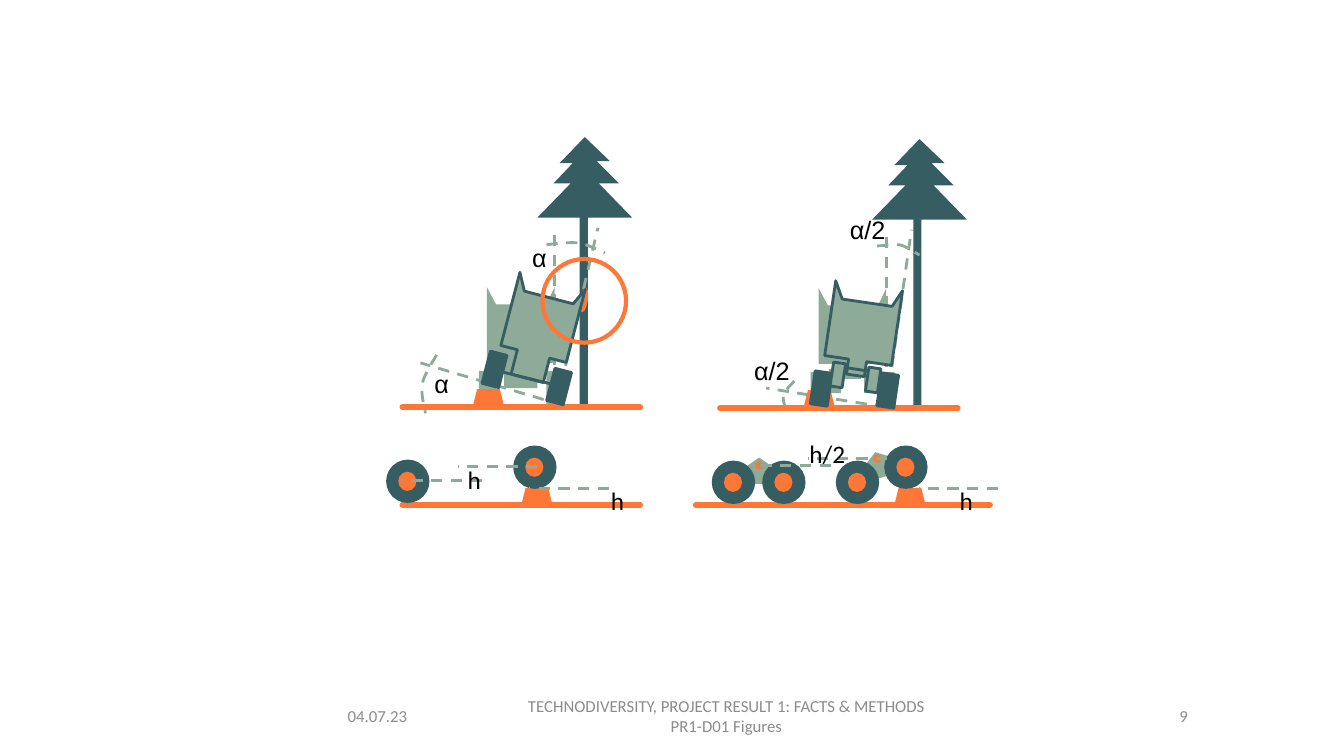
from pptx import Presentation
from pptx.dml.color import RGBColor
from pptx.enum.dml import MSO_LINE
from pptx.enum.shapes import MSO_CONNECTOR, MSO_SHAPE as SHAPE
from pptx.enum.text import MSO_ANCHOR as ANCHOR, PP_ALIGN as ALIGN
from pptx.oxml.ns import qn
from pptx.util import Inches, Pt
from lxml import etree

COLORS = {"dark": "355D62", "sage": "8EAB99", "orange": "FF7737",
          "gray": "8C8C8C", "black": "000000"}

TREE = [(0.33, 0.8), (0.94, 0.8), (0.61, 0.46), (0.81, 0.46), (0.59, 0.24),
        (0.72, 0.24), (0.47, 0), (0.22, 0.26), (0.35, 0.26), (0.16, 0.46),
        (0.33, 0.46), (0, 0.8)]


class Drawing:
    def __init__(self, slide):
        self.shapes = slide.shapes

    def color(self, name):
        return RGBColor.from_string(COLORS[name])

    def style(self, s, fill=None, line=None, width=2.0, dash=False):
        s.shadow.inherit = False
        if fill:
            s.fill.solid()
            s.fill.fore_color.rgb = self.color(fill)
        else:
            s.fill.background()
        if line:
            self.stroke(s.line, line, width, dash)
        else:
            s.line.fill.background()

    def stroke(self, line, color, width, dash):
        line.color.rgb = self.color(color)
        line.width = Pt(width)
        if dash:
            line.dash_style = MSO_LINE.DASH

    def shape(self, kind, x, y, w, h, fill=None, line=None, width=2.0, rot=0.0):
        s = self.shapes.add_shape(kind, Inches(x), Inches(y), Inches(w), Inches(h))
        s.rotation = rot
        self.style(s, fill, line, width)

    def line(self, x1, y1, x2, y2, color="sage", width=2.0, dash=True, cap="flat"):
        c = self.shapes.add_connector(MSO_CONNECTOR.STRAIGHT, Inches(x1), Inches(y1),
                                      Inches(x2), Inches(y2))
        self.stroke(c.line, color, width, dash)
        c.line._get_or_add_ln().set("cap", cap)
        etree.SubElement(c._element.spPr, qn("a:effectLst"))

    def outline(self, points, closed=True, rot=0.0, **style):
        pts = [(Inches(x), Inches(y)) for x, y in points]
        fb = self.shapes.build_freeform(*pts[0])
        fb.add_line_segments(pts[1:], close=closed)
        s = fb.convert_to_shape()
        s.rotation = rot
        self.style(s, **style)

    def arc(self, *knots, steps=10):
        """Dashed chain of cubic curves: a start, then three points per curve."""
        points = [knots[0]]
        for i in range(0, len(knots) - 1, 3):
            curve = knots[i:i + 4]
            for n in range(1, steps + 1):
                t = n / steps
                weights = ((1 - t) ** 3, 3 * t * (1 - t) ** 2, 3 * t * t * (1 - t), t ** 3)
                points.append(tuple(sum(w * p[axis] for w, p in zip(weights, curve))
                                    for axis in (0, 1)))
        self.outline(points, closed=False, line="sage", dash=True)

    def text(self, text, x, y, w, h=0.4, size=18, font="Arial", color="black",
             align=ALIGN.LEFT, anchor=ANCHOR.TOP):
        tf = self.shapes.add_textbox(Inches(x), Inches(y), Inches(w), Inches(h)).text_frame
        tf.word_wrap = True
        tf.vertical_anchor = anchor
        tf.text = text
        for p in tf.paragraphs:
            p.alignment = align
            for r in p.runs:
                r.font.size = Pt(size)
                r.font.name = font
                r.font.color.rgb = self.color(color)

    def ground(self, x1, x2, y):
        self.line(x1, y, x2, y, "orange", 4, dash=False, cap="rnd")

    def block(self, x, y):
        self.shape(SHAPE.TRAPEZOID, x, y, 0.31, 0.17, "orange")

    def wheel(self, x, y):
        self.shape(SHAPE.OVAL, x, y, 0.43, 0.43, "dark")
        self.shape(SHAPE.OVAL, x + 0.12, y + 0.12, 0.18, 0.19, "orange")

    def bogie(self, x, y, pivot, rot=0.0):
        self.shape(SHAPE.ISOSCELES_TRIANGLE, x, y, 0.76, 0.26, "sage", rot=rot)
        self.shape(SHAPE.OVAL, *pivot, 0.08, 0.08, "orange")

    def bars(self, spots, w, h, **style):
        for x, y in spots:
            self.shape(SHAPE.RECTANGLE, x, y, w, h, **style)

    def body(self, x, y, inset, depth, **style):
        right = 0.67 - inset
        if inset > 0.2:
            right -= 0.01
        points = [(0, 0), (0, 0.75), (inset, 0.75), (inset, depth), (right, depth),
                  (right, 0.75), (0.67, 0.75), (0.67, 0), (0.59, 0.17), (0.09, 0.17)]
        self.outline([(x + dx, y + dy) for dx, dy in points], **style)

    def tree(self, x, y):
        self.outline([(x + dx, y + dy) for dx, dy in TREE], fill="dark")


def main():
    prs = Presentation()
    prs.slide_width, prs.slide_height = Inches(13.33), Inches(7.5)
    d = Drawing(prs.slides.add_slide(prs.slide_layouts[6]))
    solid = {"fill": "dark", "line": "dark"}
    edged = {"fill": "sage", "line": "dark"}

    # Footer
    footer = {"size": 12, "font": "Calibri", "color": "gray", "anchor": ANCHOR.MIDDLE}
    d.text("04.07.23", 3.35, 6.9, 1.34, **footer)
    d.text("TECHNODIVERSITY, PROJECT RESULT 1: FACTS & METHODS\nPR1-D01 Figures",
           4.86, 6.9, 4.69, align=ALIGN.CENTER, **footer)
    d.text("9", 9.77, 6.9, 2.11, align=ALIGN.RIGHT, **footer)

    # Level tractors and trunks
    d.bars([(9.06, 2.12)], 0.08, 1.92, fill="dark")
    d.bars([(4.75, 3.68), (5.42, 3.68)], 0.17, 0.33, fill="sage")
    d.body(4.83, 2.85, 0.17, 1, fill="sage")
    d.bars([(5.75, 2.1)], 0.08, 1.92, fill="dark")
    d.shape(SHAPE.OVAL, 5.75, 2.85, 0.08, 0.25, "orange", rot=8)
    d.bars([(8.04, 3.69), (8.7, 3.69)], 0.17, 0.33, fill="sage")
    d.body(8.12, 2.86, 0.24, 0.9, fill="sage")
    d.bars([(8.22, 3.66), (8.57, 3.66)], 0.12, 0.24, fill="sage")

    # Full tilt angle
    d.line(5.5, 4.01, 5.5, 2.26)
    d.line(5.52, 4.01, 5.93, 2.26)
    d.arc((5.42, 2.43), (5.47, 2.42), (5.64, 2.4), (5.74, 2.41),
          (5.84, 2.43), (5.95, 2.49), (6, 2.51))
    d.text("α", 5.18, 2.35, 0.58)
    d.line(5.58, 4.02, 4.17, 3.6)
    d.arc((4.33, 3.52), (4.31, 3.56), (4.21, 3.71), (4.19, 3.8),
          (4.17, 3.9), (4.21, 4.04), (4.22, 4.1))
    d.text("α", 4.21, 3.6, 0.58)
    d.ground(3.99, 6.35, 4.04)

    # Half tilt angle
    d.line(8.79, 4.03, 8.79, 2.28)
    d.line(8.79, 4.03, 9.04, 2.28)
    d.arc((8.7, 2.44), (8.74, 2.44), (8.86, 2.42), (8.93, 2.43),
          (9, 2.45), (9.08, 2.51), (9.12, 2.53))
    d.text("α/2", 8.33, 2.08, 0.58)
    d.arc((7.88, 3.78), (7.86, 3.8), (7.79, 3.87), (7.77, 3.92),
          (7.76, 3.97), (7.79, 4.03), (7.79, 4.06))
    d.line(8.79, 4.04, 7.6, 3.85)
    d.text("α/2", 7.38, 3.48, 0.58)
    d.ground(7.14, 9.5, 4.05)

    # Side views: ground, blocks, wheels and bogies
    d.ground(3.99, 6.35, 5.01)
    d.ground(6.9, 9.82, 5.01)
    for x, y in [(5.17, 4.84), (8.87, 4.84)]:
        d.block(x, y)
    d.bogie(7.15, 4.54, (7.49, 4.58))
    d.bogie(8.34, 4.48, (8.66, 4.51), rot=342.7)
    for x, y in [(3.83, 4.56), (5.09, 4.42), (7.06, 4.57), (7.56, 4.57),
                 (8.29, 4.57), (8.77, 4.42)]:
        d.wheel(x, y)

    # Height levels
    for x, y in [(5.25, 4.85), (9.11, 4.85), (8.01, 4.55), (7.45, 4.62),
                 (4.54, 4.63), (3.99, 4.77)]:
        d.line(x + 0.79, y, x, y)
    for x, y in [(9.42, 4.77), (5.96, 4.77), (4.54, 4.56)]:
        d.text("h", x, y, 0.31, font="Calibri")
    d.text("h/2", 7.93, 4.3, 0.65, font="Calibri")

    # Fully tilted tractor
    d.bars([(4.82, 3.5), (5.46, 3.67)], 0.17, 0.33, rot=14.6, **solid)
    d.body(5.02, 2.77, 0.17, 1, rot=14.6, **edged)
    d.line(4.98, 3.69, 5.47, 3.81, "dark", dash=False)
    for x, y in [(4.69, 3.86), (7.97, 3.87)]:
        d.block(x, y)

    # Half tilted tractor
    d.bars([(8.06, 3.69), (8.72, 3.71)], 0.17, 0.33, rot=8.4, **solid)
    d.body(8.22, 2.83, 0.24, 0.9, rot=8.4, **edged)
    for ends in [(8.34, 3.64, 8.67, 3.69), (8.23, 3.79, 8.31, 3.8), (8.64, 3.85, 8.72, 3.87)]:
        d.line(*ends, "dark", dash=False)
    d.bars([(8.25, 3.6), (8.6, 3.65)], 0.12, 0.24, rot=8.4, **edged)

    # Contact ring and tree crowns
    d.shape(SHAPE.OVAL, 5.38, 2.57, 0.83, 0.83, line="orange", width=3)
    d.tree(5.33, 1.36)
    d.tree(8.65, 1.38)

    prs.save("out.pptx")


if __name__ == "__main__":
    main()
